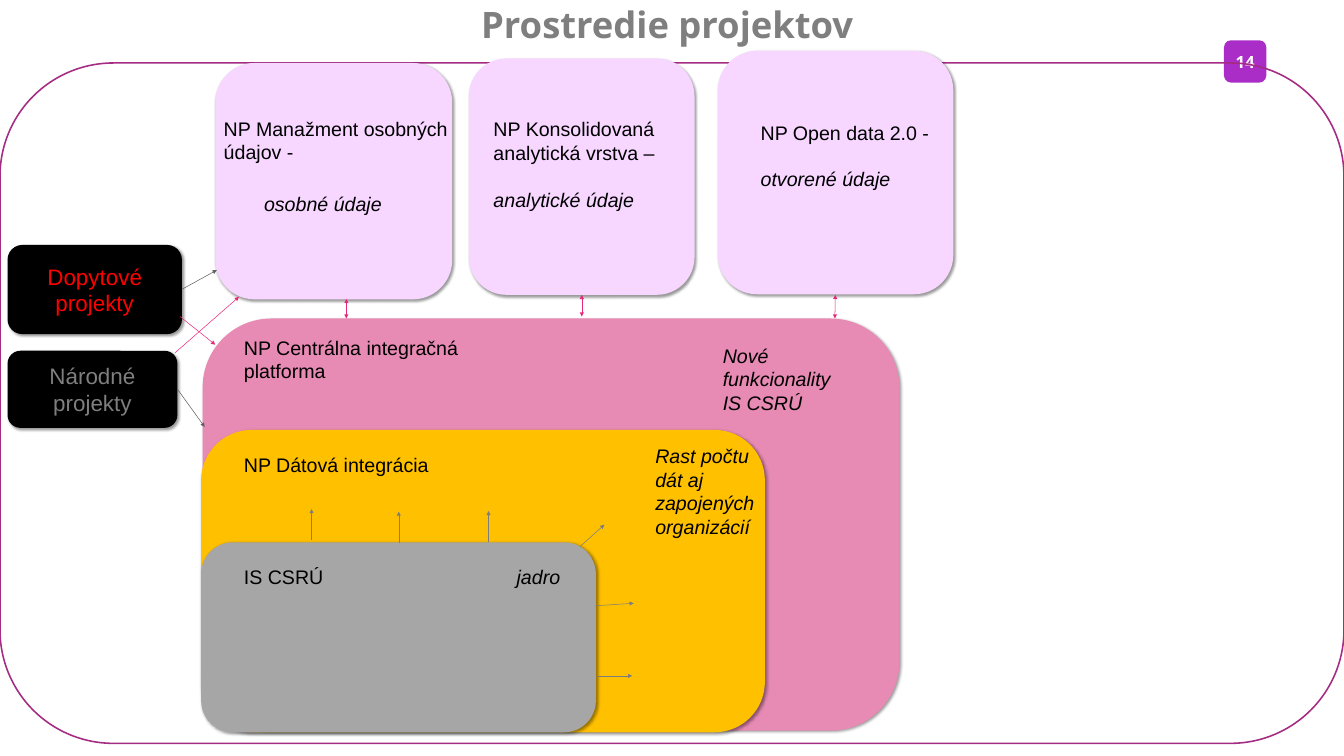
from lxml import etree
from pptx import Presentation
from pptx import util as u
from pptx.dml.color import RGBColor
from pptx.enum import shapes, text
from pptx.oxml import parse_xml
from pptx.oxml.ns import nsdecls, qn

WHITE = RGBColor(0xFF, 0xFF, 0xFF)
BLACK = RGBColor(0x00, 0x00, 0x00)
RED = RGBColor(0xFF, 0x00, 0x00)
GRAY = RGBColor(0x7F, 0x7F, 0x7F)
SILVER = RGBColor(0xA6, 0xA6, 0xA6)
VIOLET = RGBColor(0xAA, 0x2D, 0xC8)
PLUM = RGBColor(0xA4, 0x2C, 0x82)
LILAC = RGBColor(0xF7, 0xD7, 0xFF)
PINK = RGBColor(0xE7, 0x8A, 0xB4)
AMBER = RGBColor(0xFF, 0xC0, 0x00)
DARK_ARROW = RGBColor(0x5F, 0x5F, 0x5F)
GRAY_ARROW = RGBColor(0x7C, 0x7C, 0x7C)
PINK_ARROW = RGBColor(0xE5, 0x29, 0x7A)

prs = Presentation()
prs.slide_width, prs.slide_height = u.Inches(26.66), u.Inches(15)
COL, ROW = prs.slide_width / 100, prs.slide_height / 100
SHADOW = (f'<a:outerShdw {nsdecls("a")} blurRad="50800" dist="38100" dir="2700000" '
          'algn="tl" rotWithShape="0"><a:srgbClr val="000000">'
          '<a:alpha val="40000"/></a:srgbClr></a:outerShdw>')


def grid(x, y, x2, y2):
    """Turn columns and rows of the 100 x 100 grid into lengths."""
    return [u.Emu(round(n * cell)) for n, cell in zip((x, y, x2, y2), (COL, ROW) * 2)]


def write(tf, *lines, size=28, color=BLACK, font="Arial", bold=False, italic=(False,),
          align=text.PP_ALIGN.LEFT, anchor=text.MSO_ANCHOR.TOP, gap=0):
    """Write one paragraph per line; italic holds one flag per line."""
    tf.word_wrap, tf.vertical_anchor = True, anchor
    for i, (line, slanted) in enumerate(zip(lines, italic)):
        p = tf.paragraphs[0] if i == 0 else tf.add_paragraph()
        p.text, p.alignment = line, align
        p.space_before = u.Pt(gap if i else 0)
        for r in p.runs:
            r.font.name, r.font.size, r.font.color.rgb = font, u.Pt(size), color
            r.font.bold, r.font.italic = bold, slanted


s = prs.slides.add_slide(prs.slide_layouts[5])
CENTER = dict(align=text.PP_ALIGN.CENTER, anchor=text.MSO_ANCHOR.MIDDLE)

# Title
title = s.shapes.title
title.left, title.top, title.width, title.height = grid(6.53, 0.4, 86.23, 6.33)
title.text_frame.auto_size = text.MSO_AUTO_SIZE.NONE
write(title.text_frame, "Prostredie projektov", size=52, color=GRAY,
      font="Open Sans", bold=True, **CENTER)
title.text_frame.paragraphs[0].line_spacing = 0.9

# Page number badge
badge = s.shapes.add_shape(shapes.MSO_SHAPE.ROUNDED_RECTANGLE, *grid(91.07, 5.33, 3.15, 5.6))
badge.shadow.inherit = False
badge.fill.solid()
badge.fill.fore_color.rgb = VIOLET
badge.line.fill.background()
tf = badge.text_frame
tf.margin_left = tf.margin_right = 0
write(tf, "14", size=24, color=WHITE, font="Open Sans", bold=True, **CENTER)

# Project blocks, from back to front; the one without fill is the frame
for cells, fill, label, color in (
    ((15.08, 42.13, 51.84, 54.53), PINK, None, None),
    ((14.97, 56.87, 41.94, 40), AMBER, None, None),
    ((14.97, 71.73, 29.37, 25.13), SILVER, None, None),
    ((0.56, 46.4, 12.64, 10.2), BLACK, "Národné projekty", GRAY),
    ((0.56, 32.4, 12.98, 11.8), BLACK, "Dopytové projekty", RED),
    ((0, 8.33, 100, 90), None, None, None),
    ((53.41, 6.73, 17.52, 32.2), LILAC, None, None),
    ((34.88, 7.73, 16.8, 31.27), LILAC, None, None),
    ((16.02, 8.33, 17.63, 31.27), LILAC, None, None),
):
    sp = s.shapes.add_shape(shapes.MSO_SHAPE.ROUNDED_RECTANGLE, *grid(*cells))
    sp.shadow.inherit = False
    if fill is None:
        sp.fill.background()
        sp.line.color.rgb, sp.line.width = PLUM, u.Pt(2.25)
    else:
        sp.fill.solid()
        sp.fill.fore_color.rgb = fill
        sp.line.fill.background()
        sp._element.spPr.find(qn("a:effectLst")).append(parse_xml(SHADOW))
    if label:
        write(sp.text_frame, label, size=32, color=color, **CENTER)

# Captions: plain names and italic remarks
PLAIN, REMARK, BOTH = (False,), (True,), (False, True)
for cells, italic, lines in (
    ((17.78, 74.4, 10.58, 3.8), PLAIN, ["IS CSRÚ"]),
    ((17.78, 44.07, 18.57, 6.93), PLAIN, ["NP Centrálna integračná platforma"]),
    ((17.78, 59.53, 17.67, 3.8), PLAIN, ["NP Dátová integrácia"]),
    ((16.28, 15.13, 17.63, 6.93), PLAIN, ["NP Manažment osobných údajov -"]),
    ((53.41, 45.13, 12.49, 10.07), REMARK, ["Nové funkcionality\vIS CSRÚ"]),
    ((48.39, 58.4, 8.51, 13.27), REMARK, ["Rast počtu dát aj zapojených organizácií"]),
    ((38.07, 74.4, 6.38, 3.8), REMARK, ["jadro"]),
    ((19.28, 25, 10.24, 3.8), REMARK, ["osobné údaje"]),
    ((56.23, 15.6, 13.35, 10.07), BOTH, ["NP Open data 2.0 -", "otvorené údaje"]),
    ((36.35, 15.2, 16.8, 13.27), BOTH,
     ["NP Konsolidovaná analytická vrstva –", "analytické údaje"]),
):
    write(s.shapes.add_textbox(*grid(*cells)).text_frame, *lines, italic=italic, gap=33)

# Arrows: start and end cells, colour, ends that carry a head
ONE, TWO = ("tailEnd",), ("headEnd", "tailEnd")
for color, ends, routes in (
    (DARK_ARROW, ONE, [(13.2, 51.47, 15.23, 56.47), (13.54, 38.27, 16.13, 35.73)]),
    (GRAY_ARROW, ONE, [(23.18, 71.47, 23.18, 67.33), (29.67, 71.8, 29.67, 67.67),
                       (36.35, 71.73, 36.35, 67.6), (43.14, 72.33, 44.97, 69.4),
                       (44.3, 80.13, 47.15, 79.8), (44.45, 89.4, 47.04, 89.4)]),
    (PINK_ARROW, TWO, [(25.77, 39.53, 25.77, 42.13), (43.29, 39, 43.29, 41.87),
                       (62.15, 39, 62.12, 42.13)]),
    (PINK_ARROW, ONE, [(13.39, 41.87, 16.02, 45.6), (13.02, 46.67, 17.78, 39.27)]),
):
    for route in routes:
        arrow = s.shapes.add_connector(shapes.MSO_CONNECTOR.STRAIGHT, *grid(*route))
        arrow.line.color.rgb, arrow.line.width = color, u.Pt(0.75)
        for end in ends:
            etree.SubElement(arrow.line._get_or_add_ln(), qn(f"a:{end}"), type="triangle")
        etree.SubElement(arrow._element.spPr, qn("a:effectLst"))

prs.save("out.pptx")
